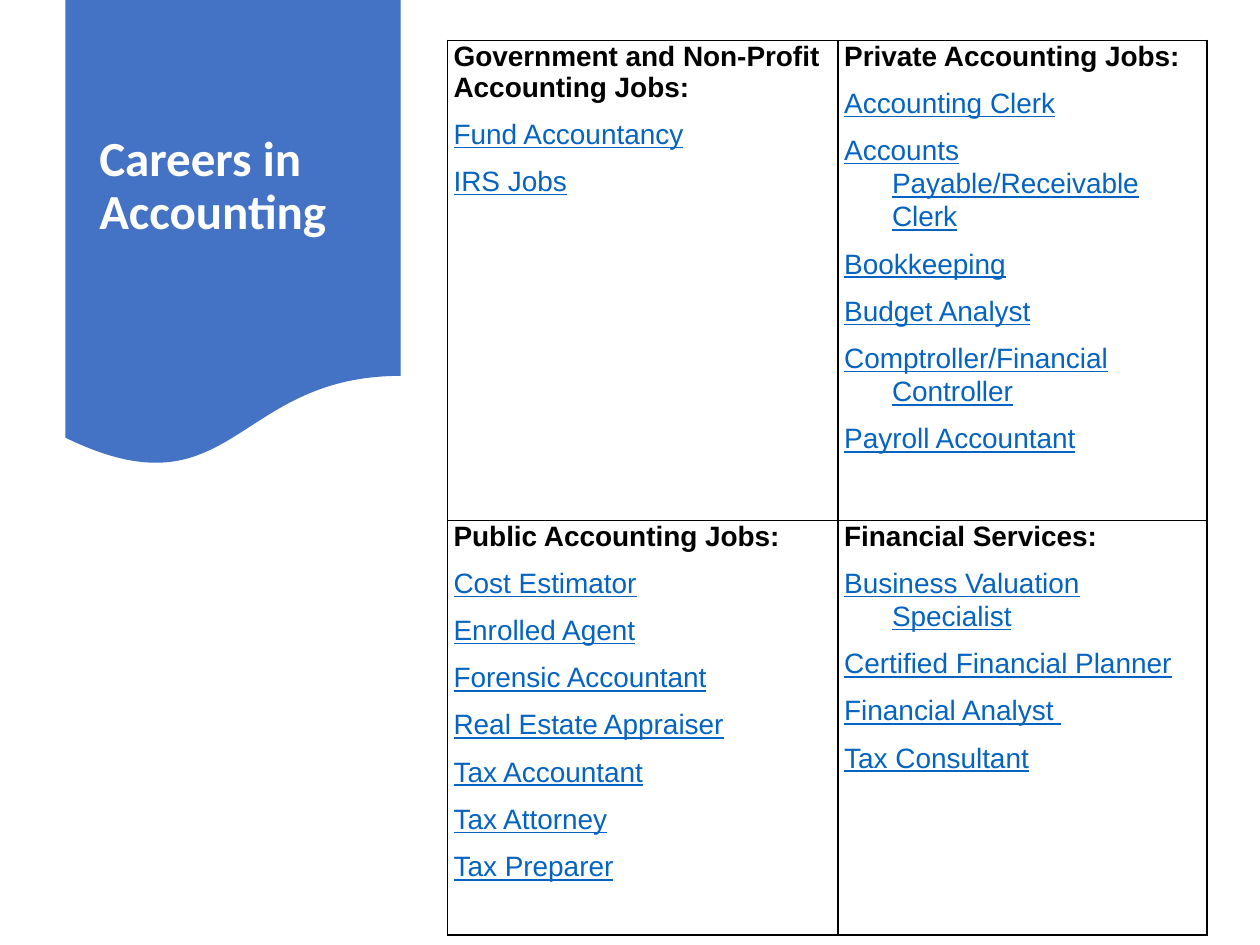
import pptx
import pptx.dml.color
import pptx.enum.shapes
import pptx.enum.text
import pptx.oxml
import pptx.oxml.ns
import pptx.util
from pptx.util import Inches

BLUE = pptx.dml.color.RGBColor(0x44, 0x72, 0xC4)
LINK_BLUE = pptx.dml.color.RGBColor(0x05, 0x63, 0xC1)
WHITE = pptx.dml.color.RGBColor(0xFF, 0xFF, 0xFF)
BLACK = pptx.dml.color.RGBColor(0, 0, 0)

COLUMN_WIDTHS = (3.1, 2.93)
ROW_HEIGHTS = (3.81, 3.29)
HANGING_INDENT = 0.38

CAREERS = [
    [
        ("Government and Non-Profit Accounting Jobs:",
         ["Fund Accountancy", "IRS Jobs"]),
        ("Private Accounting Jobs:",
         ["Accounting Clerk", "Accounts Payable/Receivable Clerk", "Bookkeeping",
          "Budget Analyst", "Comptroller/Financial Controller", "Payroll Accountant"]),
    ],
    [
        ("Public Accounting Jobs:",
         ["Cost Estimator", "Enrolled Agent", "Forensic Accountant",
          "Real Estate Appraiser", "Tax Accountant", "Tax Attorney", "Tax Preparer"]),
        ("Financial Services:",
         ["Business Valuation Specialist", "Certified Financial Planner",
          "Financial Analyst ", "Tax Consultant"]),
    ],
]


def set_font(paragraph, name, size, color, bold=False, underline=False):
    font = paragraph.font
    font.name = name
    font.size = pptx.util.Pt(size)
    font.color.rgb = color
    font.bold = bold
    font.underline = underline


def add_banner(slide):
    banner = slide.shapes.add_shape(
        pptx.enum.shapes.MSO_SHAPE.FLOWCHART_DOCUMENT,
        Inches(0.52), Inches(0), Inches(2.66), Inches(3.72))
    banner.shadow.inherit = False
    banner.fill.solid()
    banner.fill.fore_color.rgb = BLUE
    banner.line.fill.background()


def add_title(slide, text):
    title = slide.shapes.add_textbox(
        Inches(0.69), Inches(0.19), Inches(2.33), Inches(2.59))
    frame = title.text_frame
    frame.word_wrap = True
    frame.vertical_anchor = pptx.enum.text.MSO_ANCHOR.MIDDLE
    paragraph = frame.paragraphs[0]
    paragraph.text = text
    paragraph.line_spacing = 0.9
    set_font(paragraph, "Calibri", 28, WHITE, bold=True)


def set_borders(cell, color, width):
    properties = cell._tc.get_or_add_tcPr()
    for position, side in enumerate(("lnL", "lnR", "lnT", "lnB")):
        border = pptx.oxml.parse_xml(
            f'<a:{side} {pptx.oxml.ns.nsdecls("a")} w="{pptx.util.Pt(width)}">'
            f'<a:solidFill><a:srgbClr val="{color}"/></a:solidFill></a:{side}>')
        properties.insert(position, border)


def add_job(frame, job):
    paragraph = frame.add_paragraph()
    paragraph.text = job
    paragraph.line_spacing = 1.07
    paragraph.space_after = pptx.util.Pt(8)
    set_font(paragraph, "Arial", 16, LINK_BLUE, underline=True)
    properties = paragraph._p.get_or_add_pPr()
    properties.set("marL", str(Inches(HANGING_INDENT)))
    properties.set("indent", str(-Inches(HANGING_INDENT)))


def fill_cell(cell, heading, jobs):
    cell.fill.background()
    set_borders(cell, BLACK, 1)
    cell.margin_left = cell.margin_right = Inches(0.05)
    cell.margin_top = Inches(0.01)
    cell.margin_bottom = Inches(0)
    frame = cell.text_frame
    paragraph = frame.paragraphs[0]
    paragraph.text = heading
    paragraph.space_after = pptx.util.Pt(7.5)
    set_font(paragraph, "Arial", 16, BLACK, bold=True)
    for job in jobs:
        add_job(frame, job)


def add_careers_table(slide):
    table = slide.shapes.add_table(
        len(ROW_HEIGHTS), len(COLUMN_WIDTHS), Inches(3.55), Inches(0.32),
        Inches(sum(COLUMN_WIDTHS)), Inches(sum(ROW_HEIGHTS))).table
    table.first_row = False
    table.horz_banding = False
    for column, width in zip(table.columns, COLUMN_WIDTHS):
        column.width = Inches(width)
    for row, height, groups in zip(table.rows, ROW_HEIGHTS, CAREERS):
        row.height = Inches(height)
        for cell, (heading, jobs) in zip(row.cells, groups):
            fill_cell(cell, heading, jobs)


def main():
    presentation = pptx.Presentation()
    presentation.slide_width = Inches(10)
    presentation.slide_height = Inches(7.5)
    slide = presentation.slides.add_slide(presentation.slide_layouts[6])
    add_banner(slide)
    add_title(slide, "Careers in Accounting")
    add_careers_table(slide)
    presentation.save("out.pptx")


if __name__ == "__main__":
    main()
